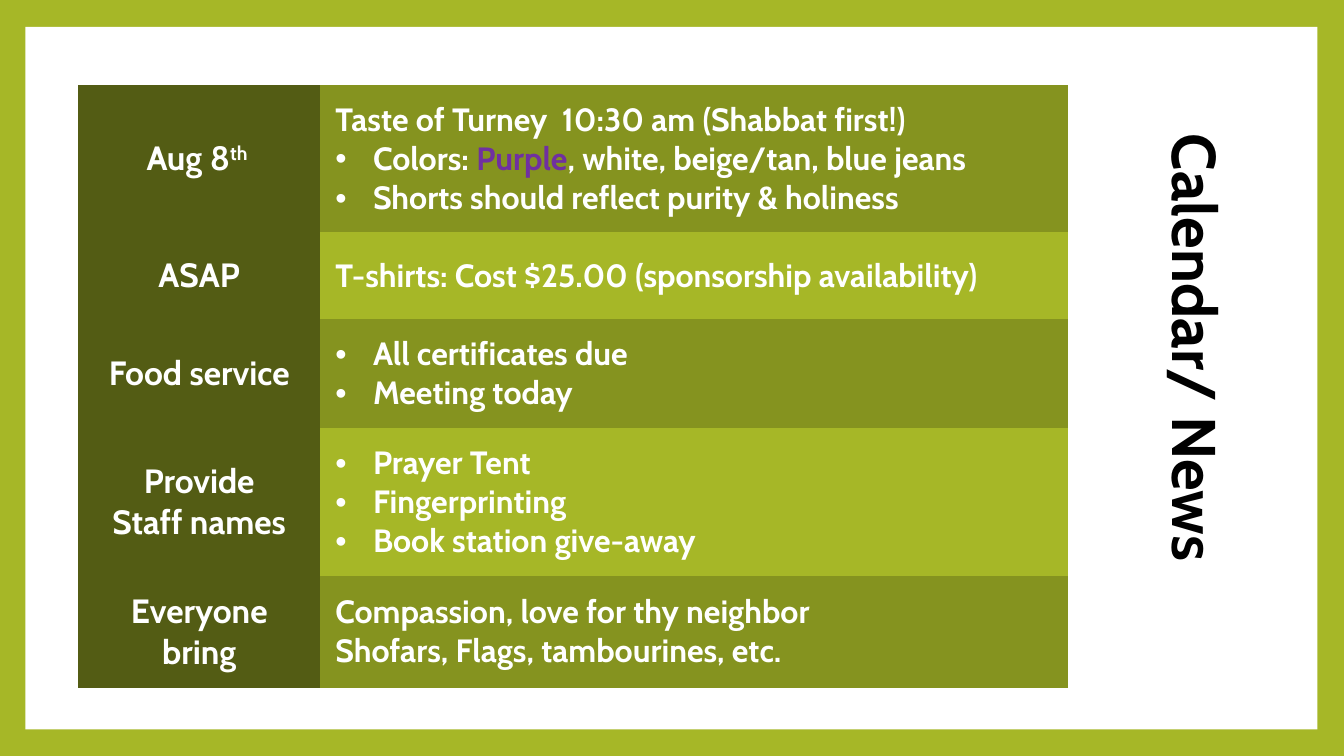
from lxml import etree
from pptx import Presentation
from pptx.dml.color import RGBColor
from pptx.enum.shapes import MSO_SHAPE
from pptx.enum.text import MSO_ANCHOR, PP_ALIGN
from pptx.oxml.ns import qn
from pptx.util import Cm, Pt

RECT = MSO_SHAPE.RECTANGLE
TOP, MIDDLE = MSO_ANCHOR.TOP, MSO_ANCHOR.MIDDLE
LEFT, CENTER = PP_ALIGN.LEFT, PP_ALIGN.CENTER
NO_GRID = "{2D5ABB26-0587-4C30-8999-92F81FD0307C}"
LIME, OLIVE, MOSS = "A6B727", "85931F", "535C14"
WHITE, BLACK, PURPLE = "FFFFFF", "000000", "7030A0"

ROWS = [
    (3.7, [["Aug 8", ("th ", WHITE, 30000)]], [
        ["Taste of Turney  10:30 am (Shabbat first!)"],
        ["•", "Colors: ", ("Purple", PURPLE, 0), ", white, beige/tan, blue jeans"],
        ["•", "Shorts should reflect purity & holiness"]]),
    (2.21, [["ASAP"]], [["T-shirts: Cost $25.00 (sponsorship availability)"]]),
    (2.74, [["Food service"]], [["•", "All certificates due"], ["•", "Meeting today"]]),
    (3.72, [["Provide"], ["Staff names"]], [
        ["•", "Prayer Tent"], ["•", "Fingerprinting"], ["•", "Book station give-away"]]),
    (2.82, [["Everyone"], ["bring"]], [
        ["Compassion, love for thy neighbor"], ["Shofars, Flags, tambourines, etc."]]),
]


def color(code):
    return RGBColor.from_string(code)


class Page:
    font = "Cabin"
    pad = Cm(0.38)
    hang = Cm(0.95)

    def __init__(self, deck, back):
        self.slide = deck.slides.add_slide(deck.slide_layouts[6])
        self.paint(self.slide.background, back)

    def paint(self, item, code):
        item.fill.solid()
        item.fill.fore_color.rgb = color(code)

    def panel(self, left, top, width, height, code):
        box = self.slide.shapes.add_shape(RECT, Cm(left), Cm(top), Cm(width), Cm(height))
        box.shadow.inherit = False
        box.line.fill.background()
        self.paint(box, code)

    def run(self, para, text, size, code, base=0):
        run = para.add_run()
        run.text = text
        font = run.font
        font.name, font.size, font.bold = self.font, Pt(size), True
        font.color.rgb = color(code)
        if base:
            run._r.get_or_add_rPr().set("baseline", str(base))

    def bullet(self, para, mark):
        props = para._p.get_or_add_pPr()
        props.set("marL", str(self.hang))
        props.set("indent", str(-self.hang))
        etree.SubElement(props, qn("a:buFont")).set("typeface", "Arial")
        etree.SubElement(props, qn("a:buChar")).set("char", mark)

    def title(self, left, top, width, height, text):
        box = self.slide.shapes.add_textbox(Cm(left), Cm(top), Cm(width), Cm(height))
        box.rotation = 90
        frame = box.text_frame
        frame.word_wrap = True
        frame.vertical_anchor = TOP
        para = frame.paragraphs[0]
        para.line_spacing = 0.9
        self.run(para, text, 44, BLACK)

    def cell(self, cell, lines, size, align, code):
        self.paint(cell, code)
        cell.vertical_anchor = MIDDLE
        cell.margin_left = cell.margin_right = self.pad
        cell.margin_top = cell.margin_bottom = self.pad
        frame = cell.text_frame
        for i, line in enumerate(lines):
            para = frame.add_paragraph() if i else frame.paragraphs[0]
            para.alignment = align
            if line[0] == "•":
                self.bullet(para, line[0])
                line = line[1:]
            for part in line:
                text, tint, base = (part, WHITE, 0) if isinstance(part, str) else part
                self.run(para, text, size, tint, base)

    def table(self, left, top, widths, rows):
        high = sum(row[0] for row in rows)
        frame = self.slide.shapes.add_table(
            len(rows), len(widths), Cm(left), Cm(top), Cm(sum(widths)), Cm(high))
        grid = frame.table
        grid.first_row = grid.horz_banding = False
        for style in grid._tbl.iter(qn("a:tableStyleId")):
            style.text = NO_GRID
        for col, width in zip(grid.columns, widths):
            col.width = Cm(width)
        for i, (height, head, body) in enumerate(rows):
            grid.rows[i].height = Cm(height)
            self.cell(grid.cell(i, 0), head, 24, CENTER, MOSS)
            self.cell(grid.cell(i, 1), body, 23, LEFT, LIME if i % 2 else OLIVE)


def main():
    deck = Presentation()
    deck.slide_width, deck.slide_height = Cm(33.87), Cm(19.05)
    page = Page(deck, LIME)
    page.panel(0.64, 0.68, 32.56, 17.7, WHITE)
    page.title(22.68, 8.92, 14.15, 2.54, "Calendar/ News")
    page.table(1.97, 2.14, [6.1, 18.84], ROWS)
    deck.save("out.pptx")


if __name__ == "__main__":
    main()
